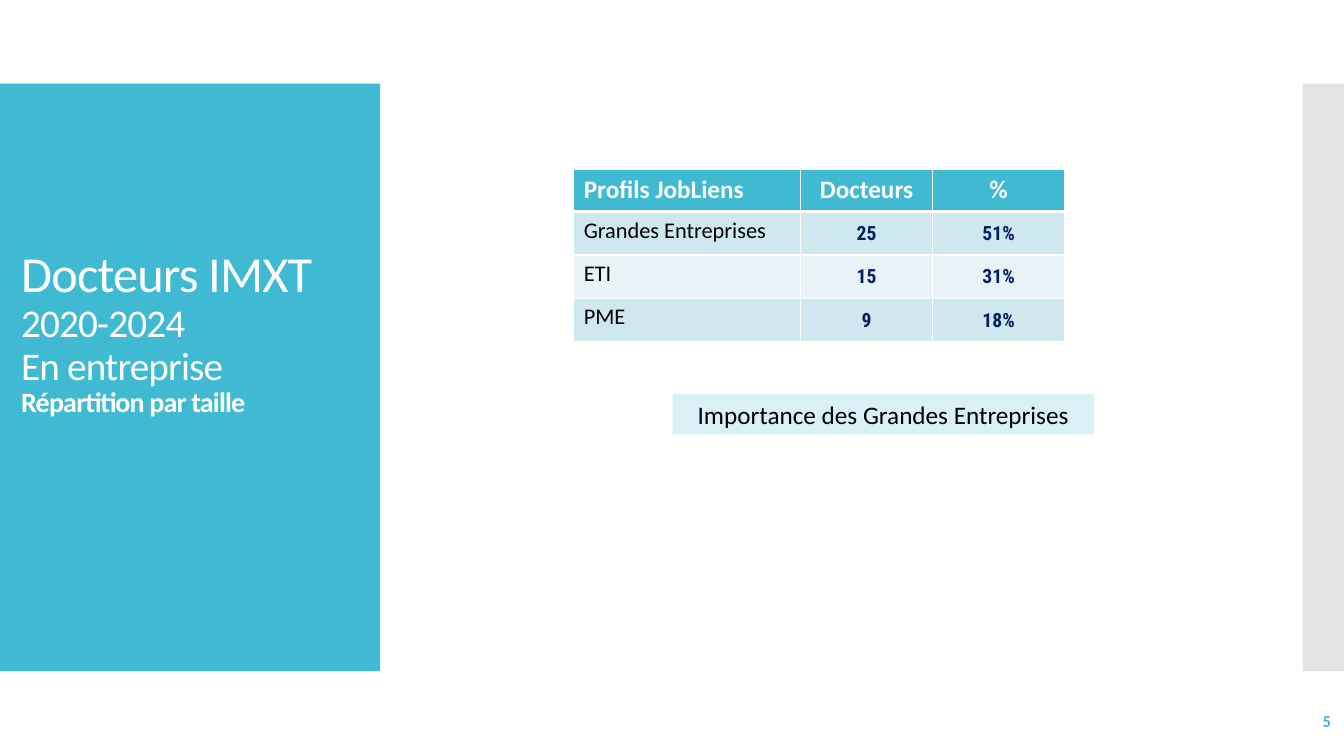
from lxml import etree
from pptx import Presentation
from pptx.dml.color import RGBColor
from pptx.enum.shapes import MSO_SHAPE
from pptx.enum.text import MSO_ANCHOR, MSO_AUTO_SIZE, PP_ALIGN
from pptx.oxml.ns import qn
from pptx.util import Inches, Pt

RECT = MSO_SHAPE.RECTANGLE
TOP, MIDDLE = MSO_ANCHOR.TOP, MSO_ANCHOR.MIDDLE
LEFT, CENTER, RIGHT = PP_ALIGN.LEFT, PP_ALIGN.CENTER, PP_ALIGN.RIGHT
NO_FIT = MSO_AUTO_SIZE.NONE

WHITE = RGBColor(0xFF, 0xFF, 0xFF)
BLACK = RGBColor(0, 0, 0)
TEAL = RGBColor(0x40, 0xBA, 0xD2)
GREY = RGBColor(0xC8, 0xC8, 0xC8)
NAVY = RGBColor(0x00, 0x20, 0x60)
PALE = RGBColor(0xD9, 0xF1, 0xF6)
BANDS = [RGBColor(0xCF, 0xE7, 0xEE), RGBColor(0xE8, 0xF3, 0xF7)]

TITLE = [("Docteurs IMXT", 36, False), ("2020-2024", 28, False),
         ("En entreprise", 28, False), ("Répartition par taille", 20, True)]
ROWS = [("Profils JobLiens", "Docteurs", "%"),
        ("Grandes Entreprises", "25", "51%"),
        ("ETI", "15", "31%"),
        ("PME", "9", "18%")]
COL_WIDTHS = [2.25, 1.31, 1.31]
ROW_HEIGHTS = [0.42, 0.43, 0.43, 0.43]
MESSAGE = "Importance des Grandes Entreprises"
PAGE = "5"

HEAD = dict(size=Pt(18), name="Calibri", bold=True, color=WHITE)
LABEL = dict(size=Pt(16), name="Calibri", bold=False, color=BLACK)
FIGURE = dict(size=Pt(14), name="Roboto Condensed", bold=True, color=NAVY)
NOTE = dict(size=Pt(18), name="Calibri", bold=False, color=BLACK)
NUMBER = dict(size=Pt(12), name="Calibri", bold=True, color=TEAL)
FIGURE_MARGINS = dict(margin_left=0.01, margin_top=0.01, margin_right=0.01, margin_bottom=0)


def add_run(p, text, fmt):
    r = p.add_run()
    r.text = text
    for key, value in fmt.items():
        if key == "color":
            r.font.color.rgb = value
        else:
            setattr(r.font, key, value)
    return r


def add_rect(slide, box, color):
    sp = slide.shapes.add_shape(RECT, *map(Inches, box))
    sp.shadow.inherit = False
    sp.fill.solid()
    sp.fill.fore_color.rgb = color
    sp.line.fill.background()
    return sp


def set_borders(cell, widths):
    tc_pr = cell._tc.get_or_add_tcPr()
    for side, width in widths.items():
        ln = etree.SubElement(tc_pr, qn(f"a:ln{side}"), w=str(Pt(width)))
        fill = etree.SubElement(ln, qn("a:solidFill"))
        etree.SubElement(fill, qn("a:srgbClr"), val=str(WHITE))


def add_panels(slide):
    add_rect(slide, (0, 0.83, 3.77, 5.83), TEAL)
    sp = add_rect(slide, (12.92, 0.83, 0.42, 5.83), GREY)
    clr = sp._element.spPr.find(qn("a:solidFill")).find(qn("a:srgbClr"))
    etree.SubElement(clr, qn("a:alpha"), val="50000")


def add_title(slide):
    sp = slide.shapes.title
    slide.shapes._spTree.append(sp._element)
    sp.left, sp.top, sp.width, sp.height = map(Inches, (0.11, 1.23, 3.77, 5.03))
    tf = sp.text_frame
    tf.auto_size, tf.vertical_anchor = NO_FIT, MIDDLE
    tf.margin_bottom = Inches(0.91)
    p = tf.paragraphs[0]
    p.alignment, p.line_spacing = LEFT, 0.9
    for i, (text, size, bold) in enumerate(TITLE):
        if i:
            p.add_line_break()
        fmt = dict(size=Pt(size), name="Calibri", bold=bold, color=WHITE)
        add_run(p, text, fmt).font._element.set("spc", "-60")


def add_size_table(slide):
    box = (5.69, 1.68, sum(COL_WIDTHS), sum(ROW_HEIGHTS))
    table = slide.shapes.add_table(len(ROWS), len(COL_WIDTHS), *map(Inches, box)).table
    for col, width in zip(table.columns, COL_WIDTHS):
        col.width = Inches(width)
    for i, (values, height) in enumerate(zip(ROWS, ROW_HEIGHTS)):
        table.rows[i].height = Inches(height)
        for j, text in enumerate(values):
            cell = table.cell(i, j)
            is_figure = i > 0 and j > 0
            set_borders(cell, dict(L=1, R=1, T=3 if i == 1 else 1, B=3 if i == 0 else 1))
            cell.fill.solid()
            cell.fill.fore_color.rgb = BANDS[(i - 1) % 2] if i else TEAL
            cell.vertical_anchor = MIDDLE if is_figure else TOP
            if is_figure:
                for side, margin in FIGURE_MARGINS.items():
                    setattr(cell, side, Inches(margin))
            p = cell.text_frame.paragraphs[0]
            p.alignment = CENTER if j else LEFT
            add_run(p, text, FIGURE if is_figure else LABEL if i else HEAD)


def add_message(slide):
    tf = add_rect(slide, (6.67, 3.91, 4.18, 0.4), PALE).text_frame
    tf.word_wrap, tf.vertical_anchor = True, TOP
    p = tf.paragraphs[0]
    p.alignment = CENTER
    add_run(p, MESSAGE, NOTE)


def add_page_number(slide):
    tf = slide.shapes.add_textbox(*map(Inches, (11.63, 6.95, 1.67, 0.4))).text_frame
    tf.word_wrap, tf.vertical_anchor = True, MIDDLE
    p = tf.paragraphs[0]
    p.alignment = RIGHT
    add_run(p, PAGE, NUMBER)


def main():
    """Build the slide on IMXT doctors by company size."""
    prs = Presentation()
    prs.slide_width, prs.slide_height = Inches(13.33), Inches(7.5)
    slide = prs.slides.add_slide(prs.slide_layouts[5])
    add_panels(slide)
    add_title(slide)
    add_size_table(slide)
    add_page_number(slide)
    add_message(slide)
    prs.save("out.pptx")


if __name__ == "__main__":
    main()
